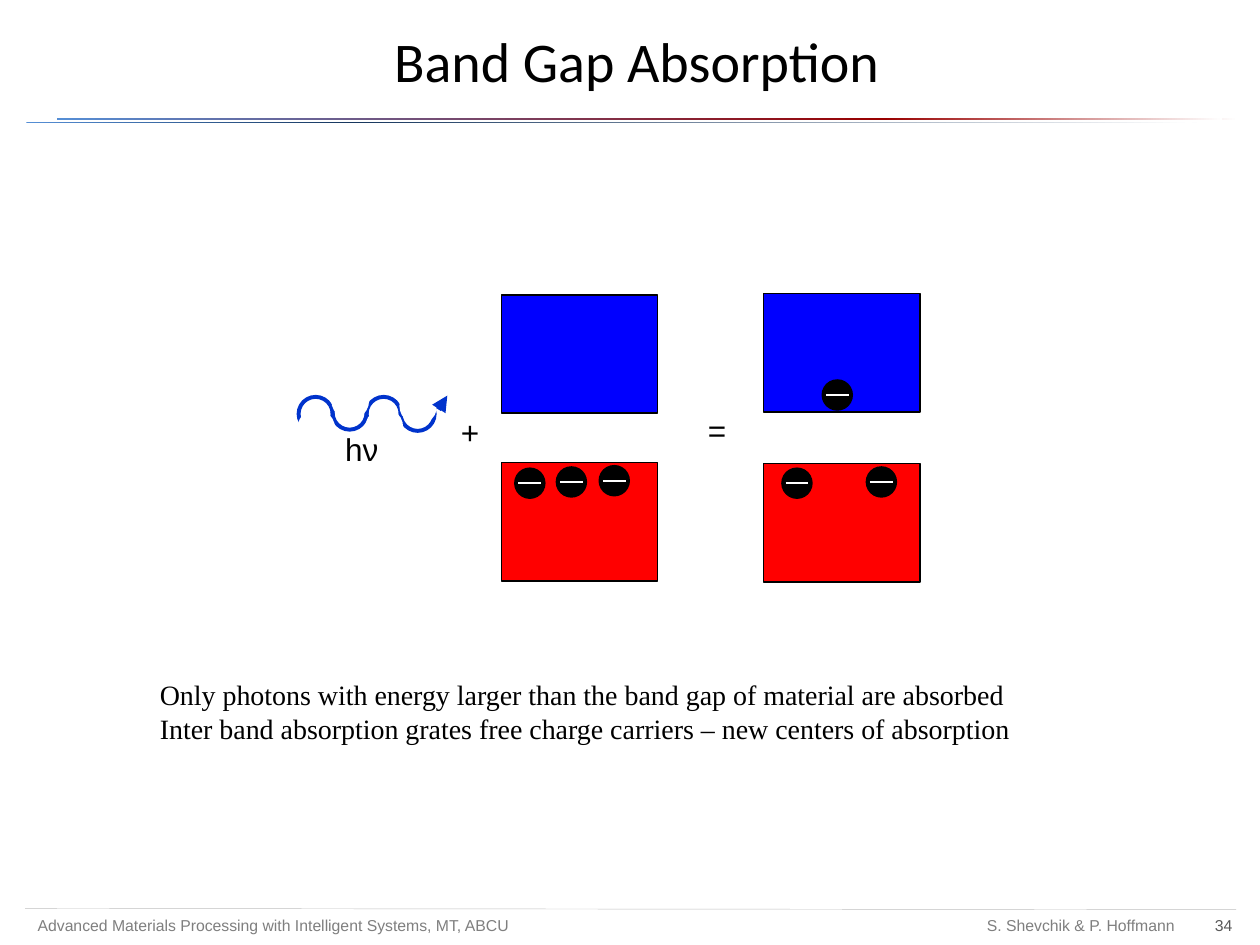
from copy import deepcopy

from pptx import Presentation
from pptx.dml.color import RGBColor
from pptx.enum.shapes import MSO_CONNECTOR as Connector, MSO_SHAPE as Shape
from pptx.enum.text import MSO_ANCHOR as Anchor, MSO_AUTO_SIZE as AutoSize, PP_ALIGN as Align
from pptx.oxml.ns import qn
from pptx.oxml.xmlchemy import OxmlElement
from pptx.util import Inches, Pt

BLACK = RGBColor(0, 0, 0)
WHITE = RGBColor(255, 255, 255)
RED = RGBColor(255, 0, 0)
BLUE = RGBColor(0, 0, 255)
WAVE_BLUE = RGBColor(0x00, 0x33, 0xCC)
SKY = RGBColor(0x55, 0x8E, 0xD5)
NAVY = RGBColor(0x17, 0x37, 0x5E)
CRIMSON = RGBColor(0x99, 0, 0)
GRAY = RGBColor(0x7F, 0x7F, 0x7F)
DARK_GRAY = RGBColor(0x59, 0x59, 0x59)
LIGHT_GRAY = RGBColor(0xBF, 0xBF, 0xBF)

# Content: lengths in inches
TITLE = "Band Gap Absorption"
STATEMENTS = [
    "Only photons with energy larger than the band gap of material are absorbed",
    "Inter band absorption grates free charge carriers – new centers of absorption",
]
FOOTERS = [  # text, left, width, alignment, colour
    ("Advanced Materials Processing with Intelligent Systems, MT, ABCU", 0.2, 4.88, Align.LEFT, GRAY),
    ("34", 9.11, 0.77, Align.RIGHT, DARK_GRAY),
    ("S. Shevchik & P. Hoffmann", 5.87, 3.55, Align.RIGHT, GRAY),
]
UPPER_RULE = [(0, SKY), (0.71, CRIMSON), (1, WHITE)]
LOWER_RULE = [(0, SKY), (0.28, NAVY), (1, WHITE)]
TITLE_RULES = [  # left, top, width, gradient stops
    (0.49, 0.94, 9.33, UPPER_RULE),
    (0.23, 0.97, 9.33, LOWER_RULE),
    (0.45, 0.94, 9.25, UPPER_RULE),
    (0.21, 0.97, 9.25, LOWER_RULE),
]
BAND_SIZE = (1.24, 0.94)
BAND_STATES = [  # left, conduction top, valence top, electron positions
    (3.98, 2.34, 3.67, [(4.08, 3.71), (4.75, 3.69), (4.41, 3.7)]),
    (6.06, 2.33, 3.68, [(6.2, 3.71), (6.87, 3.7), (6.52, 3.01)]),
]
SYMBOLS = [  # text, left, top, width, wrap
    ("hν", 2.64, 3.36, 0.51, False),
    ("+", 3.56, 3.23, 0.55, True),
    ("=", 5.52, 3.21, 0.55, True),
]
WAVE_LEFT, WAVE_STEP, WAVE_SIZE, MASK_SIZE = 2.37, 0.27, 0.27, 0.3
WAVE_TOPS = [3.15, 3.14, 3.15, 3.15]
MASK_TOPS = [3.25, 3.03, 3.24, 3.07]
ELECTRON_SIZE, MINUS_LENGTH = 0.25, 0.18


def add_shape(shapes, kind, left, top, width, height, fill=None, line=None, weight=1):
    shape = shapes.add_shape(kind, *map(Inches, (left, top, width, height)))
    shape.shadow.inherit = False
    if fill is None:
        shape.fill.background()
    else:
        shape.fill.solid()
        shape.fill.fore_color.rgb = fill
    if line is None:
        shape.line.fill.background()
    else:
        shape.line.color.rgb = line
        shape.line.width = Pt(weight)
    return shape


def add_line(shapes, start, end, color, weight, arrow=False):
    line = shapes.add_connector(Connector.STRAIGHT, *map(Inches, (*start, *end)))
    line.line.color.rgb = color
    line.line.width = Pt(weight)
    if arrow:
        tail = OxmlElement("a:tailEnd")
        tail.set("type", "triangle")
        line.line._get_or_add_ln().append(tail)
    line._element.spPr.append(OxmlElement("a:effectLst"))


def add_gradient(shape, stops):
    shape.fill.gradient()
    shape.fill.gradient_angle = 0
    stop_list = shape._element.spPr.find(qn("a:gradFill")).find(qn("a:gsLst"))
    while len(stop_list) < len(stops):
        stop_list.append(deepcopy(stop_list[0]))
    for stop, (position, color) in zip(shape.fill.gradient_stops, stops):
        stop.position = position
        stop.color.rgb = color


def write_paragraph(paragraph, text, font, size, color, align=Align.LEFT):
    run = paragraph.add_run()
    run.text = text
    paragraph.alignment = align
    for name, value in {"name": font, "size": Pt(size)}.items():
        setattr(run.font, name, value)
    run.font.color.rgb = color


def add_text(shapes, lines, box, font, size, color=BLACK, align=Align.LEFT, wrap=True):
    frame = shapes.add_textbox(*map(Inches, box)).text_frame
    frame.word_wrap = wrap
    frame.auto_size = AutoSize.SHAPE_TO_FIT_TEXT
    for index, text in enumerate(lines):
        paragraph = frame.add_paragraph() if index else frame.paragraphs[0]
        write_paragraph(paragraph, text, font, size, color, align)


def add_electron(shapes, left, top):
    add_shape(shapes, Shape.OVAL, left, top, ELECTRON_SIZE, ELECTRON_SIZE, BLACK)
    start = left + (ELECTRON_SIZE - MINUS_LENGTH) / 2
    middle = top + ELECTRON_SIZE / 2
    add_line(shapes, (start, middle), (start + MINUS_LENGTH, middle), WHITE, 1)


def add_wave(shapes):
    # Rings with one half covered form the wave
    for index, top in enumerate(WAVE_TOPS):
        add_shape(shapes, Shape.OVAL, WAVE_LEFT + index * WAVE_STEP, top,
                  WAVE_SIZE, WAVE_SIZE, line=WAVE_BLUE, weight=2.25)
    for index, top in enumerate(MASK_TOPS):
        add_shape(shapes, Shape.OVAL, WAVE_LEFT + index * WAVE_STEP - 0.01, top,
                  MASK_SIZE, MASK_SIZE, WHITE)
    add_line(shapes, (3.48, 3.25), (3.55, 3.14), WAVE_BLUE, 3, arrow=True)


def main():
    presentation = Presentation()
    presentation.slide_width, presentation.slide_height = Inches(10), Inches(7.5)
    slide = presentation.slides.add_slide(presentation.slide_layouts[5])
    shapes = slide.shapes

    # Footer and title rules
    for text, left, width, align, color in FOOTERS:
        add_text(shapes, [text], (left, 7.22, width, 0.25), "Arial", 9, color, align)
    add_line(shapes, (0.2, 7.21), (9.81, 7.22), LIGHT_GRAY, 0.25)
    for left, top, width, stops in TITLE_RULES:
        add_gradient(add_shape(shapes, Shape.RECTANGLE, left, top, width, 0.01), stops)

    # Title
    title = shapes.title
    box = {"left": 0.2, "top": 0.05, "width": 9.71, "height": 0.85}
    for name, value in box.items():
        setattr(title, name, Inches(value))
    title.text_frame.vertical_anchor = Anchor.MIDDLE
    write_paragraph(title.text_frame.paragraphs[0], TITLE, "Calibri", 32, BLACK, Align.CENTER)

    # Statements
    add_text(shapes, STATEMENTS, (1.17, 5.33, 7, 0.77), "Times New Roman", 16)

    # Photon, bands before and after absorption
    diagram = shapes.add_group_shape().shapes
    add_wave(diagram)
    for left, conduction_top, valence_top, electrons in BAND_STATES:
        for top, fill in ((valence_top, RED), (conduction_top, BLUE)):
            add_shape(diagram, Shape.RECTANGLE, left, top, *BAND_SIZE, fill, BLACK)
        for position in electrons:
            add_electron(diagram, *position)
    for text, left, top, width, wrap in SYMBOLS:
        add_text(diagram, [text], (left, top, width, 0.48), "Arial", 18, wrap=wrap)

    presentation.save("out.pptx")


if __name__ == "__main__":
    main()
